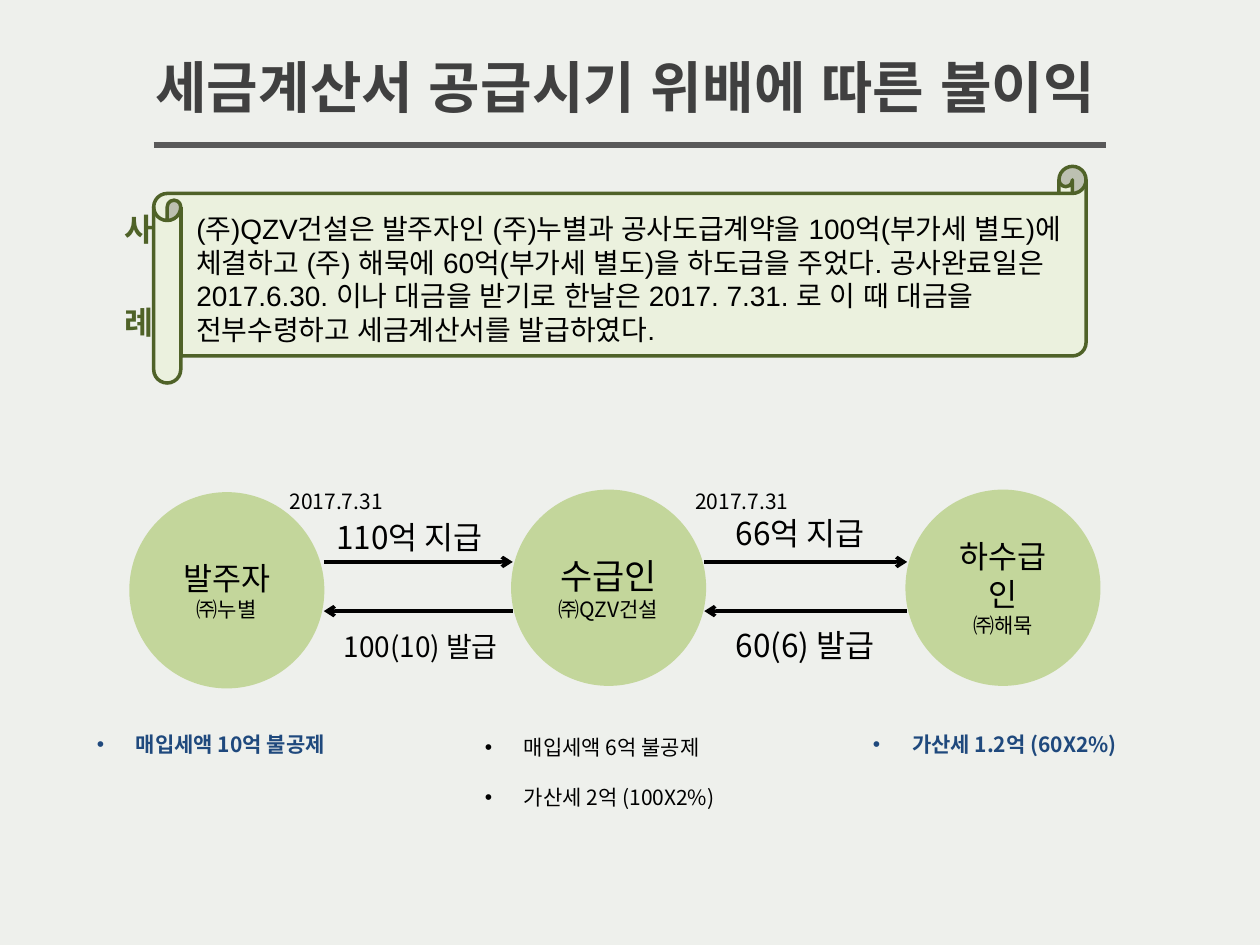
"""Build a slide on the penalty for a late tax invoice."""
from dataclasses import dataclass
from typing import Any

import pptx
import pptx.dml.color
import pptx.enum.shapes
import pptx.enum.text
import pptx.oxml.ns
import pptx.util
from lxml import etree
from pptx.util import Inches

HUES: dict[str, str] = {
    "back": "EEF0EC", "rule": "595959", "title": "404040", "cream": "EBF1DE",
    "olive": "4F6228", "green": "C3D69B", "black": "000000", "navy": "1F497D",
}
SANS = "Noto Sans CJK KR"
SHAPES = pptx.enum.shapes.MSO_SHAPE
FIT = pptx.enum.text.MSO_AUTO_SIZE
MIDDLE = pptx.enum.text.MSO_ANCHOR.MIDDLE
CENTER = pptx.enum.text.PP_ALIGN.CENTER
TOP, LOW = 4.46, 4.85


@dataclass
class Style:
    size: float = 12
    hue: str = "black"
    bold: bool = False
    font: str = SANS


@dataclass
class Party:
    left: float
    top: float
    role: str
    firm: str
    size: float = 18
    inset: float = 0.1


@dataclass
class Arrow:
    start: float
    end: float
    top: float


@dataclass
class Label:
    left: float
    top: float
    width: float
    height: float
    text: str
    style: Style


@dataclass
class Note:
    left: float
    top: float
    height: float
    lines: list[str]
    style: Style


PARTIES = [
    Party(1.04, 3.92, "발주자", "㈜누별"),
    Party(7.2, 3.9, "하수급인", "㈜해묵"),
    Party(4.07, 3.9, "수급인", "㈜QZV건설", 20, 0.05),
]
ARROWS = [
    Arrow(2.57, 4.07, TOP), Arrow(5.59, 7.2, TOP),
    Arrow(4.07, 2.57, LOW), Arrow(7.2, 5.59, LOW),
]
CASE = (
    "(주)QZV건설은 발주자인 (주)누별과 공사도급계약을 100억(부가세 별도)에 체결하고 "
    "(주) 해묵에 60억(부가세 별도)을 하도급을 주었다. 공사완료일은 2017.6.30. 이나 "
    "대금을 받기로 한날은 2017. 7.31. 로 이 때 대금을 전부수령하고 세금계산서를 발급하였다."
)
LABELS = [
    Label(1.46, 1.63, 7.17, 1.18, CASE, Style(16, font="Arial")),
    Label(2.57, 4.06, 1.5, 0.4, "110억 지급", Style(18)),
    Label(5.74, 4.03, 1.5, 0.4, "66억 지급", Style(18)),
    Label(5.74, 4.92, 1.5, 0.4, "60(6) 발급", Style(18)),
    Label(2.63, 4.95, 1.5, 0.37, "100(10) 발급", Style(16)),
    Label(2.2, 3.83, 1.77, 0.3, "2017.7.31", Style()),
    Label(5.42, 3.83, 1.77, 0.3, "2017.7.31", Style()),
]
BLUE = Style(hue="navy", bold=True)
NOTES = [
    Note(0.67, 5.76, 0.3, ["매입세액 10억 불공제"], BLUE),
    Note(3.75, 5.78, 0.71, ["매입세액 6억 불공제", "가산세 2억 (100X2%)"], Style()),
    Note(6.83, 5.76, 0.3, ["가산세 1.2억 (60X2%)"], BLUE),
]


def tint(name: str) -> pptx.dml.color.RGBColor:
    """Give the colour of a name."""
    return pptx.dml.color.RGBColor.from_string(HUES[name])


def add_run(para: Any, text: str, style: Style) -> Any:
    """Add one styled run."""
    run = para.add_run()
    run.text = text
    run.font.size = pptx.util.Pt(style.size)
    run.font.bold = style.bold
    run.font.color.rgb = tint(style.hue)
    run.font.name = style.font
    east = etree.SubElement(run.font._element, pptx.oxml.ns.qn("a:ea"))
    east.set("typeface", style.font)
    return run


def add_box(slide: Any, left: float, top: float, width: float, height: float) -> Any:
    """Add a wrapping text box and give its frame."""
    box = slide.shapes.add_textbox(Inches(left), Inches(top), Inches(width), Inches(height))
    box.text_frame.word_wrap = True
    box.text_frame.auto_size = FIT.SHAPE_TO_FIT_TEXT
    return box.text_frame


def add_form(slide: Any, kind: Any, area: tuple[float, ...], fill: str, edge: str) -> Any:
    """Add a filled and outlined preset shape."""
    form = slide.shapes.add_shape(kind, *map(Inches, area))
    form.shadow.inherit = False
    form.fill.solid()
    form.fill.fore_color.rgb = tint(fill)
    form.line.color.rgb = tint(edge)
    form.line.width = pptx.util.Pt(2)
    return form


def add_line(slide: Any, arrow: Arrow, hue: str, width: float, head: bool) -> None:
    """Add a level line, with an arrowhead if asked."""
    line = slide.shapes.add_connector(
        pptx.enum.shapes.MSO_CONNECTOR.STRAIGHT,
        Inches(arrow.start), Inches(arrow.top), Inches(arrow.end), Inches(arrow.top))
    line.line.color.rgb = tint(hue)
    line.line.width = pptx.util.Pt(width)
    if head:
        tail = etree.SubElement(line.line._get_or_add_ln(), pptx.oxml.ns.qn("a:tailEnd"))
        tail.set("type", "arrow")
    etree.SubElement(line._element.spPr, pptx.oxml.ns.qn("a:effectLst"))


def add_party(slide: Any, party: Party) -> None:
    """Add a circle with a role and a firm."""
    area = (party.left, party.top, 1.52, 1.53)
    frame = add_form(slide, SHAPES.OVAL, area, "green", "green").text_frame
    frame.word_wrap = True
    frame.vertical_anchor = MIDDLE
    frame.margin_left = frame.margin_right = Inches(party.inset)
    for para, text, size in ((frame.paragraphs[0], party.role, party.size),
                             (frame.add_paragraph(), party.firm, 12)):
        para.alignment = CENTER
        add_run(para, text, Style(size))


def add_note(slide: Any, note: Note) -> None:
    """Add a bulleted list."""
    frame = add_box(slide, note.left, note.top, 2.28, note.height)
    for count, text in enumerate(note.lines):
        para = frame.add_paragraph() if count else frame.paragraphs[0]
        if count:
            para.space_before = pptx.util.Pt(14)
        props = para._p.get_or_add_pPr()
        props.set("marL", str(Inches(0.31)))
        props.set("indent", str(-Inches(0.31)))
        font = etree.SubElement(props, pptx.oxml.ns.qn("a:buFont"))
        font.set("typeface", "Arial")
        etree.SubElement(props, pptx.oxml.ns.qn("a:buChar")).set("char", "•")
        add_run(para, text, note.style)


def add_title(slide: Any, text: str) -> None:
    """Place and fill the title."""
    title = slide.shapes.title
    title.left, title.top, title.width, title.height = map(Inches, (0.67, 0.36, 8.59, 0.64))
    frame = title.text_frame
    frame.auto_size = FIT.NONE
    frame.vertical_anchor = MIDDLE
    frame.paragraphs[0].alignment = CENTER
    add_run(frame.paragraphs[0], text, Style(32, "title", True, "Arial"))


def add_side(slide: Any) -> None:
    """Add the upright heading with a wide gap."""
    frame = add_box(slide, 0.79, 1.6, 0.5, 1.44)
    frame._txBody.bodyPr.set("vert", "eaVert")
    style = Style(18, "olive", True)
    for text in "사 례":
        run = add_run(frame.paragraphs[0], text, style)
        if text == " ":
            run.font._element.set("spc", "3100")


def main() -> None:
    """Draw and save the slide."""
    deck = pptx.Presentation()
    deck.slide_width, deck.slide_height = Inches(10), Inches(7.5)
    slide = deck.slides.add_slide(deck.slide_layouts[5])
    slide.background.fill.solid()
    slide.background.fill.fore_color.rgb = tint("back")
    add_title(slide, "세금계산서 공급시기 위배에 따른 불이익")
    add_line(slide, Arrow(1.22, 8.78, 1.15), "rule", 3, False)
    add_form(slide, SHAPES.HORIZONTAL_SCROLL, (1.22, 1.32, 7.4, 1.72), "cream", "olive")
    for party in PARTIES:
        add_party(slide, party)
    for arrow in ARROWS:
        add_line(slide, arrow, "black", 2, True)
    for label in LABELS:
        frame = add_box(slide, label.left, label.top, label.width, label.height)
        add_run(frame.paragraphs[0], label.text, label.style)
    for note in NOTES:
        add_note(slide, note)
    add_side(slide)
    deck.save("out.pptx")


if __name__ == "__main__":
    main()
